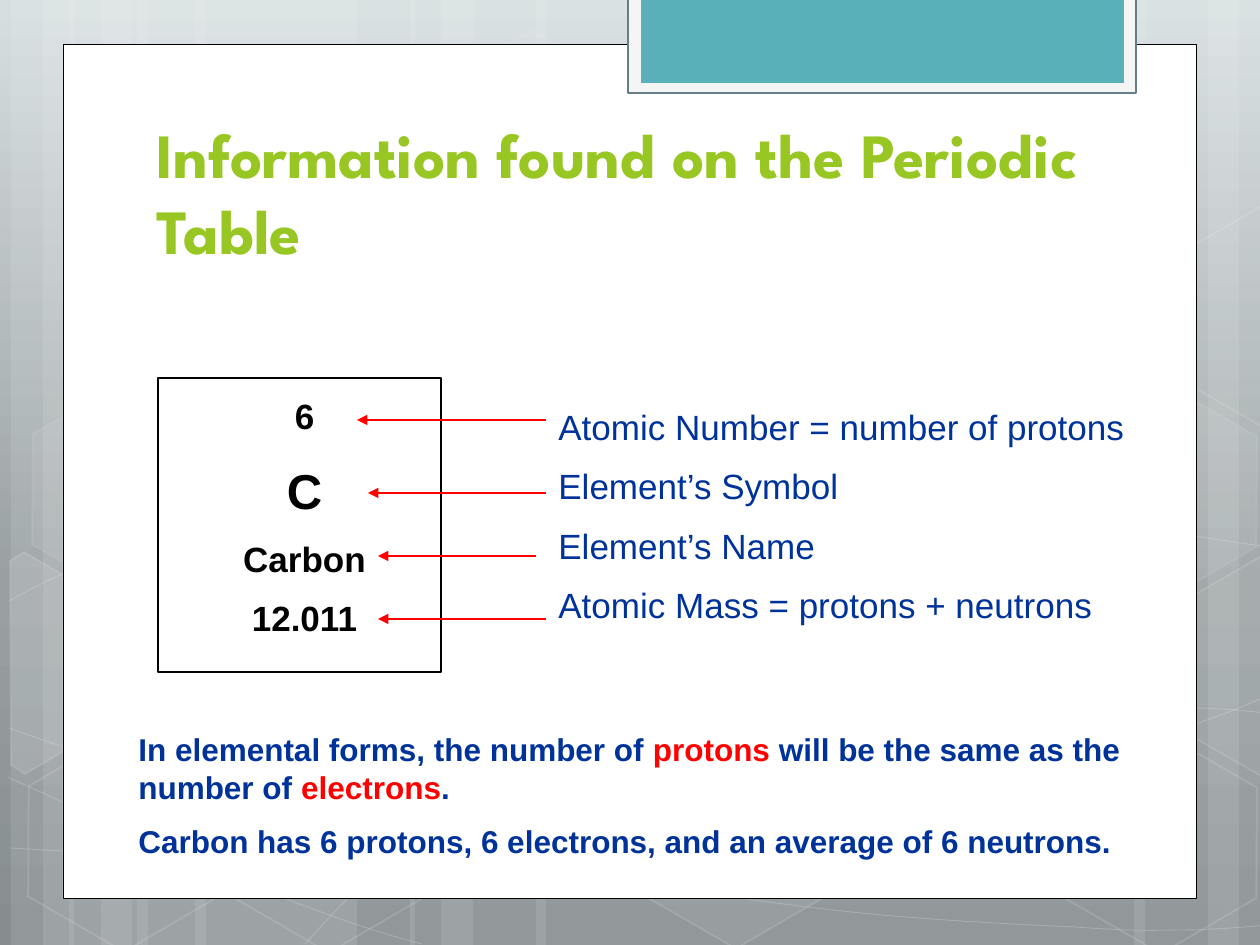
from copy import deepcopy

from lxml.etree import SubElement as Sub
from pptx import Presentation
from pptx.dml.color import RGBColor as RGB
from pptx.enum.shapes import MSO_CONNECTOR as LINK, MSO_SHAPE as KIND
from pptx.enum.text import MSO_ANCHOR as ANCHOR, MSO_AUTO_SIZE as FIT, PP_ALIGN as ALIGN
from pptx.oxml.ns import qn
from pptx.util import Pt

SCALE = 914400 / 126
WIDE, HIGH = 1260, 945
WHITE, BLACK, RED, NAVY = "FFFFFF", "000000", "FF0000", "003399"

BARS = [(137, 220), (11, 63), (43, 105), (195, 220), (69, 63), (101, 105),
        (925, 220), (1208, 63), (1134, 105), (536, 389), (410, 63), (441, 105)]
CURVES = [
    [(9, 848), (77, 852), (145, 856), (239, 854), (334, 853), (451, 851), (577, 838),
     (703, 825), (882, 801), (998, 777), (1113, 753), (1231, 716), (1269, 694)],
    [(9, 601), (45, 581), (82, 562), (152, 543), (224, 524), (326, 496), (437, 488),
     (549, 479), (685, 478), (824, 488), (963, 498), (1193, 537), (1269, 547)],
    [(8, 777), (160, 847), (311, 916), (422, 944)],
    [(9, 728), (48, 742), (88, 756), (161, 776), (234, 795), (344, 827), (450, 848),
     (554, 869), (687, 892), (791, 905), (896, 919), (1008, 924), (1075, 927),
     (1142, 932), (1158, 930), (1191, 930), (1223, 929), (1246, 927), (1269, 925)],
    [(305, 944), (328, 919), (350, 893), (381, 871), (411, 847), (454, 823), (489, 805),
     (524, 787), (546, 780), (591, 767), (638, 754), (722, 737), (766, 728),
     (811, 719), (818, 719), (857, 717), (896, 713), (958, 708), (1000, 708),
     (1045, 707), (1116, 708), (1116, 708), (1144, 708), (1173, 708), (1201, 708),
     (1223, 709), (1246, 711), (1256, 712), (1264, 713), (1267, 712), (1268, 713)],
]
HEXES = [(421, 45, 4, 8), (626, 742, 6, 12), (14, 745, 0, 12), (18, 393, 7, 8),
         (219, 746, 0, 12), (949, 571, 10, 12), (1051, 747, 0, 12), (1051, 396, 7, 8)]
PARTS = [
    ([(10, 561), (24, 552), (121, 609), (120, 718), (25, 774), (11, 765)], 10),
    ([(1167, 611), (1263, 555), (1271, 562), (1271, 772), (1263, 777), (1167, 722)], 4),
    ([(1167, 261), (1263, 205), (1273, 212), (1271, 422), (1263, 427), (1167, 372)], 0),
]
ARROWS = [(546, 357, 420), (546, 368, 493), (536, 378, 556), (546, 378, 619)]


def px(*vals):
    return [round(val * SCALE) for val in vals]


def paint(fill, tint, alpha=100):
    if not alpha:
        fill.background()
        return
    fill.solid()
    fill.fore_color.rgb = RGB.from_string(tint)
    if alpha < 100:
        tone = fill._xPr.find(qn("a:solidFill"))[0]
        Sub(tone, qn("a:alpha"), val=str(alpha * 1000))


def style(shape, tint=WHITE, alpha=100, edge=WHITE, clear=0, width=1):
    shape.shadow.inherit = False
    paint(shape.fill, tint, alpha)
    if clear:
        shape.line.width = Pt(width)
    paint(shape.line.fill, edge, clear)


def block(slide, box, kind=KIND.RECTANGLE, **look):
    shape = slide.shapes.add_shape(kind, *px(*box))
    style(shape, **look)
    return shape


def trace(slide, dots, close, **look):
    pen = slide.shapes.build_freeform(*dots[0], scale=SCALE)
    pen.add_line_segments(dots[1:], close=close)
    shape = pen.convert_to_shape()
    style(shape, **look)
    return shape


def bend(shape):
    route = next(shape.element.iter(qn("a:path")))
    lines = route.findall(qn("a:lnTo"))
    for at in range(0, len(lines), 3):
        curve = Sub(route, qn("a:cubicBezTo"))
        for line in lines[at:at + 3]:
            curve.append(line[0])
            route.remove(line)


def write(para, text, tint, **form):
    run = para.add_run()
    run.text = text
    for name, val in form.items():
        setattr(run.font, name, val)
    paint(run.font.fill, tint)


def note(slide, box, lines, align=ALIGN.LEFT, bold=False):
    frame = slide.shapes.add_textbox(*px(*box)).text_frame
    frame.word_wrap = True
    frame.auto_size = FIT.SHAPE_TO_FIT_TEXT
    for num, (size, runs) in enumerate(lines):
        para = frame.add_paragraph() if num else frame.paragraphs[0]
        para.alignment = align
        gap = Sub(para._p.get_or_add_pPr(), qn("a:spcBef"))
        Sub(gap, qn("a:spcPct"), val="50000")
        for text, tint in runs:
            write(para, text, tint, name="Arial", size=Pt(size), bold=bold)


def arrow(slide, start, end, y):
    link = slide.shapes.add_connector(LINK.STRAIGHT, *px(start, y, end, y))
    link.line.width = Pt(0.75)
    paint(link.line.fill, RED)
    Sub(link.line._get_or_add_ln(), qn("a:tailEnd"), type="triangle")
    Sub(link.element.spPr, qn("a:effectLst"))


def shade(slide):
    fill = slide.background.fill
    fill.gradient()
    fill.gradient_angle = 270
    stops = next(slide.element.iter(qn("a:gsLst")))
    stops.append(deepcopy(stops[-1]))
    tones = [(0, "D6DEDF"), (0.62, "99A0A2"), (1, "868D8F")]
    for stop, (place, tint) in zip(fill.gradient_stops, tones):
        stop.position = place
        stop.color.rgb = RGB.from_string(tint)


def decor(slide):
    for left, width in BARS:
        block(slide, (left, 0, width, HIGH), alpha=10)
    for knots in CURVES:
        bend(trace(slide, knots, False, alpha=0, clear=20, width=0.5))
    for left, top, alpha, clear in HEXES:
        cell = block(slide, (left, top, 220, 192), KIND.HEXAGON, alpha=alpha, clear=clear)
        cell.adjustments[0] = 0.285
        cell.rotation = 30
    for dots, alpha in PARTS:
        trace(slide, dots, True, alpha=alpha, clear=12)
    block(slide, (63, 45, 1134, 854), edge=BLACK, clear=100, width=0.5)
    block(slide, (628, -2, 508, 95), tint="F5F5F5", edge="648086", clear=100, width=1.25)
    block(slide, (641, -2, 483, 85), tint="59B0B9")


def head(slide, text):
    title = slide.shapes.title
    title.element.getparent().append(title.element)
    spot = dict(zip(("left", "top", "width", "height"), px(144, 115, 968, 158)))
    for name, val in spot.items():
        setattr(title, name, val)
    frame = title.text_frame
    form = {"word_wrap": True, "auto_size": FIT.NONE, "vertical_anchor": ANCHOR.BOTTOM}
    for name, val in form.items():
        setattr(frame, name, val)
    para = frame.paragraphs[0]
    para.alignment = ALIGN.LEFT
    write(para, text, "98C723", name="League Spartan", size=Pt(36), bold=True)


def main():
    deck = Presentation()
    deck.slide_width, deck.slide_height = px(WIDE, HIGH)
    slide = deck.slides.add_slide(deck.slide_layouts[5])
    shade(slide)
    decor(slide)
    head(slide, "Information found on the Periodic Table")
    block(slide, (158, 378, 283, 294), alpha=0, edge=BLACK, clear=100, width=0.75)
    facts = [(20, "6"), (28, "C"), (20, "Carbon"), (20, "12.011")]
    note(slide, (168, 388, 273, 270), [(size, [(text, BLACK)]) for size, text in facts],
         ALIGN.CENTER, True)
    names = ["Atomic Number = number of protons", "Element’s Symbol",
             "Element’s Name", "Atomic Mass = protons + neutrons"]
    note(slide, (546, 399, 640, 243), [(20, [(text, NAVY)]) for text in names])
    for start, end, y in ARROWS:
        arrow(slide, start, end, y)
    note(slide, (126, 724, 1018, 146), [
        (18, [("In elemental forms, the number of ", NAVY), ("protons", RED),
              (" will be the same as the number of ", NAVY), ("electrons", RED), (".", NAVY)]),
        (18, [("Carbon has 6 protons, 6 electrons, and an average of 6 neutrons.", NAVY)]),
    ], bold=True)
    deck.save("out.pptx")


if __name__ == "__main__":
    main()
